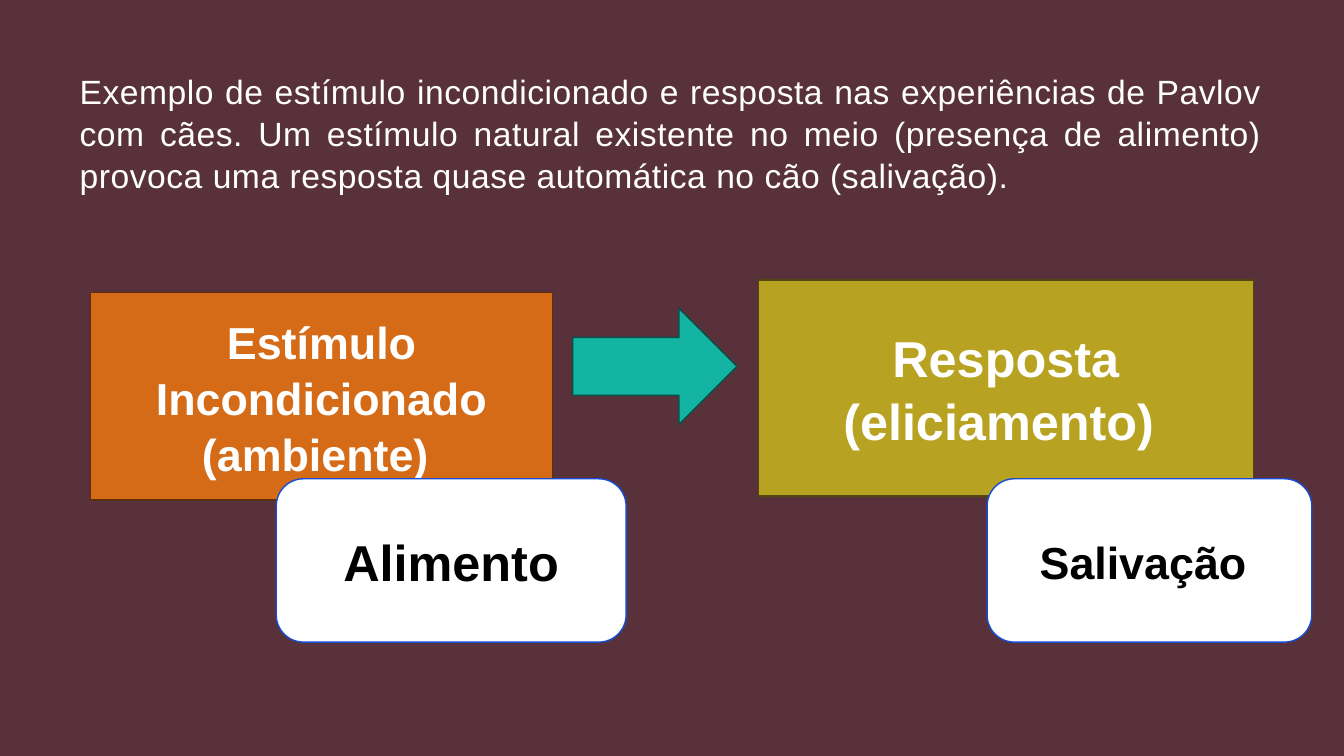
from dataclasses import dataclass

import pptx
import pptx.dml.color
import pptx.enum.shapes
import pptx.enum.text
import pptx.util

Inches = pptx.util.Inches
MSO = pptx.enum.shapes.MSO_SHAPE
ALIGN = pptx.enum.text.PP_ALIGN
ANCHOR = pptx.enum.text.MSO_ANCHOR
FONT = "Arial"
WHITE, BLACK, BLUE = "FFFFFF", "000000", "174CD5"
INTRO = (
    "Exemplo de estímulo incondicionado e resposta nas experiências de Pavlov "
    "com cães. Um estímulo natural existente no meio (presença de alimento) "
    "provoca uma resposta quase automática no cão (salivação)."
)


@dataclass
class Block:
    kind: MSO
    left: float
    top: float
    width: float
    height: float
    fill: str
    line: str
    text: str = ""
    size: int = 32
    color: str = WHITE


BLOCKS = [
    Block(MSO.RECTANGLE, 0.9, 2.9, 4.58, 2.06, "D56A17", "5D2E0A",
          "Estímulo Incondicionado (ambiente) "),
    Block(MSO.RECTANGLE, 7.52, 2.78, 4.91, 2.14, "B8A221", "51470E",
          "Resposta (eliciamento) ", 36),
    Block(MSO.RIGHT_ARROW, 5.68, 3.06, 1.63, 1.15, "14B4A3", "094F47"),
    Block(MSO.ROUNDED_RECTANGLE, 2.74, 4.75, 3.47, 1.62, WHITE, BLUE,
          "Alimento", 36, BLACK),
    Block(MSO.ROUNDED_RECTANGLE, 9.79, 4.75, 3.22, 1.62, WHITE, BLUE,
          "Salivação ", 32, BLACK),
]


def rgb(value: str) -> pptx.dml.color.RGBColor:
    return pptx.dml.color.RGBColor.from_string(value)


def apply(target, values: dict) -> None:
    for name, value in values.items():
        setattr(target, name, value)


def write(tf, text: str, size: int, color: str, bold: bool, align: ALIGN,
          spacing: float):
    """Fill a text frame with one formatted run and return the run."""
    tf.word_wrap = True
    p = tf.paragraphs[0]
    apply(p, {"alignment": align, "line_spacing": spacing})
    r = p.add_run()
    r.text = text
    apply(r.font, {"name": FONT, "size": pptx.util.Pt(size), "bold": bold})
    r.font.color.rgb = rgb(color)
    return r


def add_intro(s) -> None:
    sp = s.shapes.add_textbox(Inches(0.79), Inches(0.68), Inches(11.73), Inches(1.62))
    tf = sp.text_frame
    apply(tf, {f"margin_{side}": 0 for side in ("left", "top", "right", "bottom")})
    r = write(tf, INTRO, 24, WHITE, False, ALIGN.JUSTIFY, 1.05)
    r.font._element.set("spc", "40")


def add_block(s, block: Block) -> None:
    box = (block.left, block.top, block.width, block.height)
    sp = s.shapes.add_shape(block.kind, *map(Inches, box))
    sp.shadow.inherit = False
    sp.fill.solid()
    sp.fill.fore_color.rgb = rgb(block.fill)
    sp.line.color.rgb = rgb(block.line)
    sp.line.width = pptx.util.Pt(1)
    if block.text:
        sp.text_frame.vertical_anchor = ANCHOR.MIDDLE
        write(sp.text_frame, block.text, block.size, block.color, True,
              ALIGN.CENTER, 1.04)


def main() -> None:
    prs = pptx.Presentation()
    apply(prs, {"slide_width": Inches(13.33), "slide_height": Inches(7.5)})
    s = prs.slides.add_slide(prs.slide_layouts[6])

    # Background
    s.background.fill.solid()
    s.background.fill.fore_color.rgb = rgb("58313B")

    # Introduction, then stimulus and response blocks
    add_intro(s)
    for block in BLOCKS:
        add_block(s, block)

    prs.save("out.pptx")


if __name__ == "__main__":
    main()
